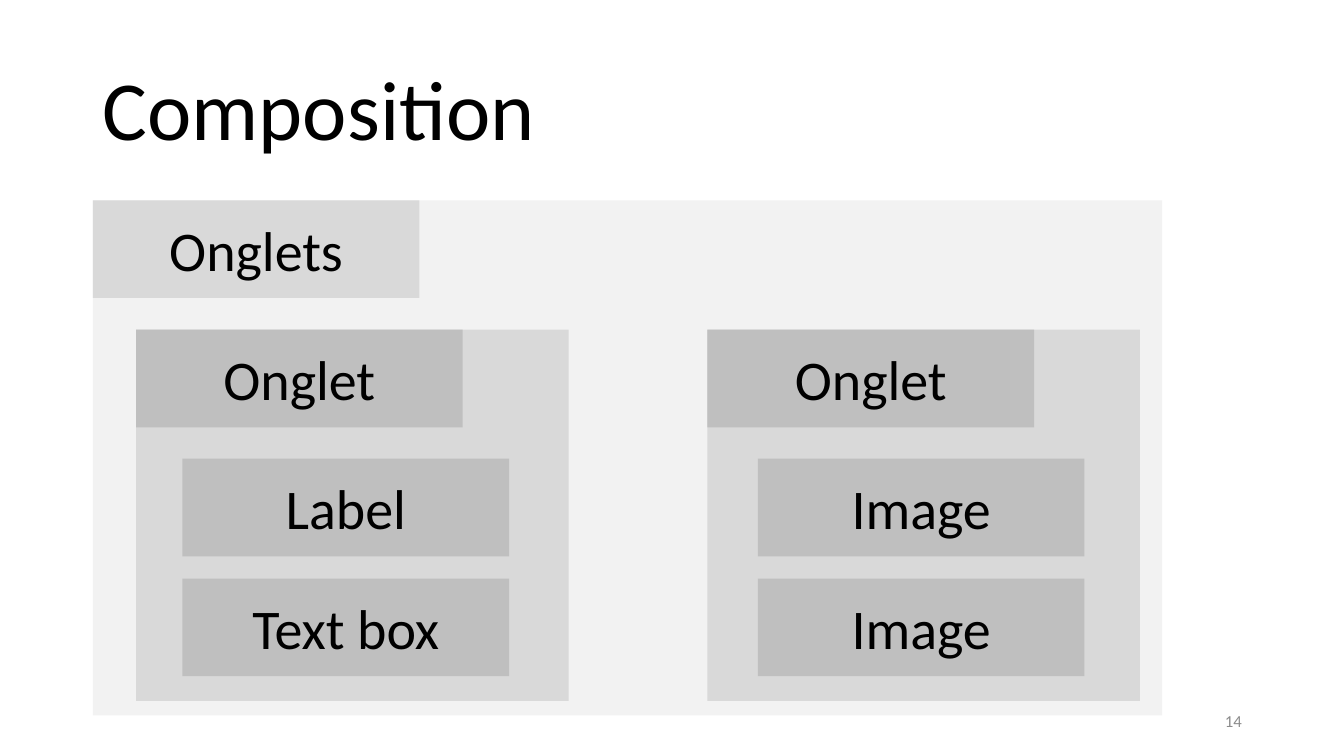
from pptx import Presentation
from pptx.dml.color import RGBColor
from pptx.enum.shapes import MSO_SHAPE
from pptx.enum.text import MSO_ANCHOR, PP_ALIGN
from pptx.util import Cm, Pt

BLACK = RGBColor(0x00, 0x00, 0x00)
NUMBER_GREY = RGBColor(0x8C, 0x8C, 0x8C)
PALE_GREY = RGBColor(0xF2, 0xF2, 0xF2)
LIGHT_GREY = RGBColor(0xD9, 0xD9, 0xD9)
MID_GREY = RGBColor(0xBF, 0xBF, 0xBF)

FONT = "Calibri"
MARGIN = 2.34
TAG_WIDTH, TAG_HEIGHT = 8.23, 2.46
TAB_TOP, TAB_WIDTH, TAB_HEIGHT = 8.31, 10.9, 9.35
CONTROL_TOP, CONTROL_PITCH = 11.56, 3.02

# Left edge of the tab, left edge of its controls, names of the controls
TABS = [
    (3.43, 4.6, ["Label", "Text box"]),
    (17.83, 19.1, ["Image", "Image"]),
]


def write(frame, text, size, color, align):
    frame.word_wrap = True
    frame.vertical_anchor = MSO_ANCHOR.MIDDLE
    paragraph = frame.paragraphs[0]
    paragraph.alignment = align
    run = paragraph.add_run()
    run.text = text
    run.font.name = FONT
    run.font.size = Pt(size)
    run.font.color.rgb = color
    return paragraph


def add_text(slide, box, text, size, color, align):
    label = slide.shapes.add_textbox(*map(Cm, box))
    return write(label.text_frame, text, size, color, align)


def add_panel(slide, left, top, width, height, color):
    panel = slide.shapes.add_shape(
        MSO_SHAPE.RECTANGLE, Cm(left), Cm(top), Cm(width), Cm(height))
    panel.shadow.inherit = False
    panel.fill.solid()
    panel.fill.fore_color.rgb = color
    panel.line.fill.background()
    return panel


def add_tag(slide, left, top, name, color):
    """Add a panel of the common small size that carries a name."""
    tag = add_panel(slide, left, top, TAG_WIDTH, TAG_HEIGHT, color)
    write(tag.text_frame, name, 40, BLACK, PP_ALIGN.CENTER)


def add_tab(slide, left, control_left, controls):
    add_panel(slide, left, TAB_TOP, TAB_WIDTH, TAB_HEIGHT, LIGHT_GREY)
    add_tag(slide, left, TAB_TOP, "Onglet", MID_GREY)
    for row, control in enumerate(controls):
        add_tag(slide, control_left, CONTROL_TOP + row * CONTROL_PITCH,
                control, MID_GREY)


def main():
    deck = Presentation()
    deck.slide_width, deck.slide_height = Cm(33.87), Cm(19.05)
    slide = deck.slides.add_slide(deck.slide_layouts[6])

    heading = add_text(slide, (MARGIN, 1.02, 29.21, 3.68), "Composition",
                       60, BLACK, PP_ALIGN.LEFT)
    heading.line_spacing = 0.9

    add_panel(slide, MARGIN, 5.05, 26.95, 12.98, PALE_GREY)
    add_tag(slide, MARGIN, 5.05, "Onglets", LIGHT_GREY)
    for left, control_left, controls in TABS:
        add_tab(slide, left, control_left, controls)

    add_text(slide, (23.93, 17.65, 7.62, 1.02), "14",
             12, NUMBER_GREY, PP_ALIGN.RIGHT)
    deck.save("out.pptx")


if __name__ == "__main__":
    main()
